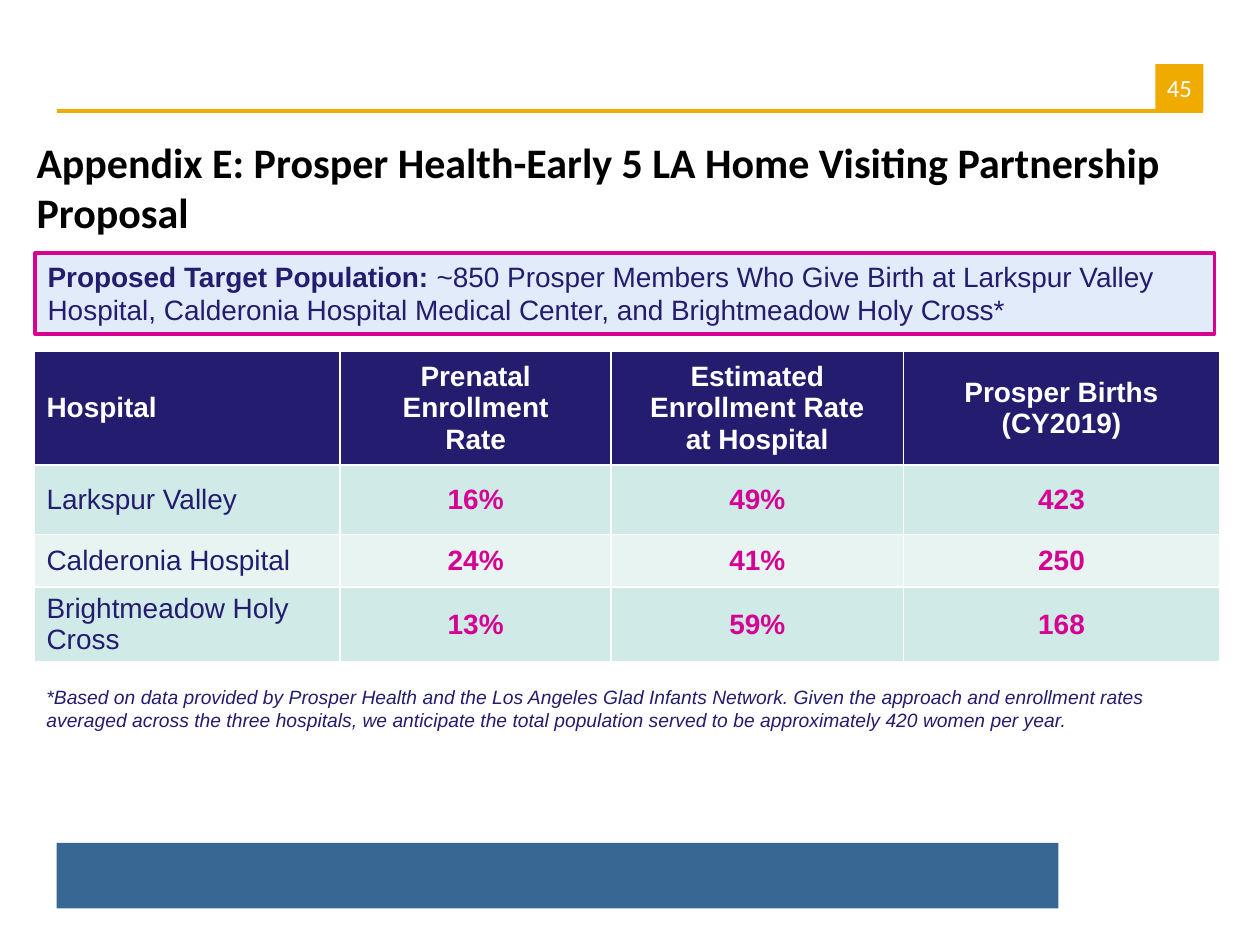
"""Build the home visiting partnership appendix slide."""
from dataclasses import dataclass

from lxml import etree
from pptx import Presentation
from pptx.dml.color import RGBColor
from pptx.enum.shapes import MSO_CONNECTOR, MSO_SHAPE
from pptx.enum.text import MSO_ANCHOR, PP_ALIGN
from pptx.oxml.ns import qn
from pptx.util import Inches, Pt

RECT = MSO_SHAPE.RECTANGLE
STRAIGHT = MSO_CONNECTOR.STRAIGHT
LEFT, CENTER = PP_ALIGN.LEFT, PP_ALIGN.CENTER
TOP, MIDDLE, BOTTOM = MSO_ANCHOR.TOP, MSO_ANCHOR.MIDDLE, MSO_ANCHOR.BOTTOM

BLACK = RGBColor(0x00, 0x00, 0x00)
WHITE = RGBColor(0xFF, 0xFF, 0xFF)
NAVY = RGBColor(0x24, 0x1C, 0x6E)
MAGENTA = RGBColor(0xD6, 0x00, 0x93)
GOLD = RGBColor(0xF0, 0xAB, 0x00)
STEEL = RGBColor(0x38, 0x67, 0x94)
PALE_BLUE = RGBColor(0xE1, 0xEB, 0xF9)
BANDS = (RGBColor(0xD0, 0xEA, 0xE8), RGBColor(0xE7, 0xF4, 0xF2))


@dataclass(frozen=True)
class Style:
    size: float
    color: RGBColor
    bold: bool = False
    italic: bool = False
    font: str = "Arial"


@dataclass(frozen=True)
class Box:
    left: float
    top: float
    width: float
    height: float

    def emu(self) -> tuple:
        return tuple(Inches(v) for v in (self.left, self.top, self.width, self.height))


TITLE = Style(24, BLACK, bold=True, font="Calibri")
NUMBER = Style(14.1, WHITE, font="Calibri")
LEAD = Style(16, NAVY, bold=True)
BODY = Style(16, NAVY)
HEADER = Style(16, WHITE, bold=True)
VALUE = Style(16, MAGENTA, bold=True)
NOTE = Style(11, NAVY, italic=True)

COL_WIDTHS = (2.43, 2.15, 2.32, 2.51)
ROW_HEIGHTS = (0.9, 0.55, 0.42, 0.55)
ROWS = (
    ("Hospital", "Prenatal Enrollment\nRate",
     "Estimated Enrollment Rate\nat Hospital", "Prosper Births\n(CY2019)"),
    ("Larkspur Valley", "16%", "49%", "423"),
    ("Calderonia Hospital", "24%", "41%", "250"),
    ("Brightmeadow Holy Cross", "13%", "59%", "168"),
)


def format_run(r, style: Style) -> None:
    r.font.name = style.font
    r.font.size = Pt(style.size)
    r.font.bold = style.bold
    r.font.italic = style.italic
    r.font.color.rgb = style.color


def set_text(tf, text: str, style: Style, align=LEFT) -> None:
    tf.text = text
    for p in tf.paragraphs:
        p.alignment = align
        for r in p.runs:
            format_run(r, style)


def set_margins(tf, x: float, y: float) -> None:
    tf.margin_left = tf.margin_right = Inches(x)
    tf.margin_top = tf.margin_bottom = Inches(y)


def add_rect(s, box: Box, fill: RGBColor, line: RGBColor = None):
    sp = s.shapes.add_shape(RECT, *box.emu())
    sp.shadow.inherit = False
    sp.fill.solid()
    sp.fill.fore_color.rgb = fill
    if line is None:
        sp.line.fill.background()
    else:
        sp.line.color.rgb = line
        sp.line.width = Pt(2)
    return sp


def add_rule(s, x1: float, x2: float, y: float) -> None:
    line = s.shapes.add_connector(STRAIGHT, Inches(x1), Inches(y), Inches(x2), Inches(y))
    line.line.color.rgb = GOLD
    line.line.width = Pt(2)
    etree.SubElement(line._element.spPr, qn("a:effectLst"))


def set_borders(cell) -> None:
    tc_pr = cell._tc.get_or_add_tcPr()
    for i, side in enumerate(("lnL", "lnR", "lnT", "lnB")):
        ln = etree.Element(qn(f"a:{side}"), w=str(Pt(1)))
        fill = etree.SubElement(ln, qn("a:solidFill"))
        etree.SubElement(fill, qn("a:srgbClr"), val=str(WHITE))
        tc_pr.insert(i, ln)


def add_hospital_table(s, box: Box) -> None:
    table = s.shapes.add_table(len(ROWS), len(COL_WIDTHS), *box.emu()).table
    for col, width in zip(table.columns, COL_WIDTHS):
        col.width = Inches(width)
    for i, values in enumerate(ROWS):
        table.rows[i].height = Inches(ROW_HEIGHTS[i])
        for j, text in enumerate(values):
            cell = table.cell(i, j)
            cell.vertical_anchor = MIDDLE
            cell.fill.solid()
            cell.fill.fore_color.rgb = BANDS[(i - 1) % 2] if i else NAVY
            set_borders(cell)
            style = HEADER if i == 0 else VALUE if j else BODY
            set_text(cell.text_frame, text, style, CENTER if j else LEFT)


def main() -> None:
    prs = Presentation()
    prs.slide_width, prs.slide_height = Inches(10), Inches(7.5)
    s = prs.slides.add_slide(prs.slide_layouts[5])

    add_rect(s, Box(0.45, 6.69, 7.95, 0.52), STEEL)
    add_rule(s, 0.45, 9.55, 0.88)
    tf = add_rect(s, Box(9.17, 0.51, 0.38, 0.37), GOLD).text_frame
    set_margins(tf, 0, 0)
    tf.word_wrap = False
    tf.vertical_anchor = MIDDLE
    set_text(tf, "45", NUMBER, CENTER)

    title = s.shapes.title
    title.left, title.top, title.width, title.height = Box(0.18, 1, 9.57, 0.94).emu()
    tf = title.text_frame
    set_margins(tf, 0.11, 0.06)
    tf.vertical_anchor = BOTTOM
    set_text(tf, "Appendix E: Prosper Health-Early 5 LA Home Visiting Partnership Proposal", TITLE)

    tf = add_rect(s, Box(0.28, 2.01, 9.36, 0.64), PALE_BLUE, MAGENTA).text_frame
    tf.word_wrap = True
    tf.vertical_anchor = TOP
    set_text(tf, "Proposed Target Population: ", LEAD)
    r = tf.paragraphs[0].add_run()
    r.text = ("~850 Prosper Members Who Give Birth at Larkspur Valley Hospital, "
              "Calderonia Hospital Medical Center, and Brightmeadow Holy Cross*")
    format_run(r, BODY)

    add_hospital_table(s, Box(0.27, 2.79, sum(COL_WIDTHS), sum(ROW_HEIGHTS)))

    tf = s.shapes.add_textbox(*Box(0.27, 5.39, 9.39, 0.47).emu()).text_frame
    tf.word_wrap = True
    set_text(tf, "*Based on data provided by Prosper Health and the Los Angeles Glad Infants "
             "Network. Given the approach and enrollment rates averaged across the three "
             "hospitals, we anticipate the total population served to be approximately "
             "420 women per year.", NOTE)

    prs.save("out.pptx")


if __name__ == "__main__":
    main()
